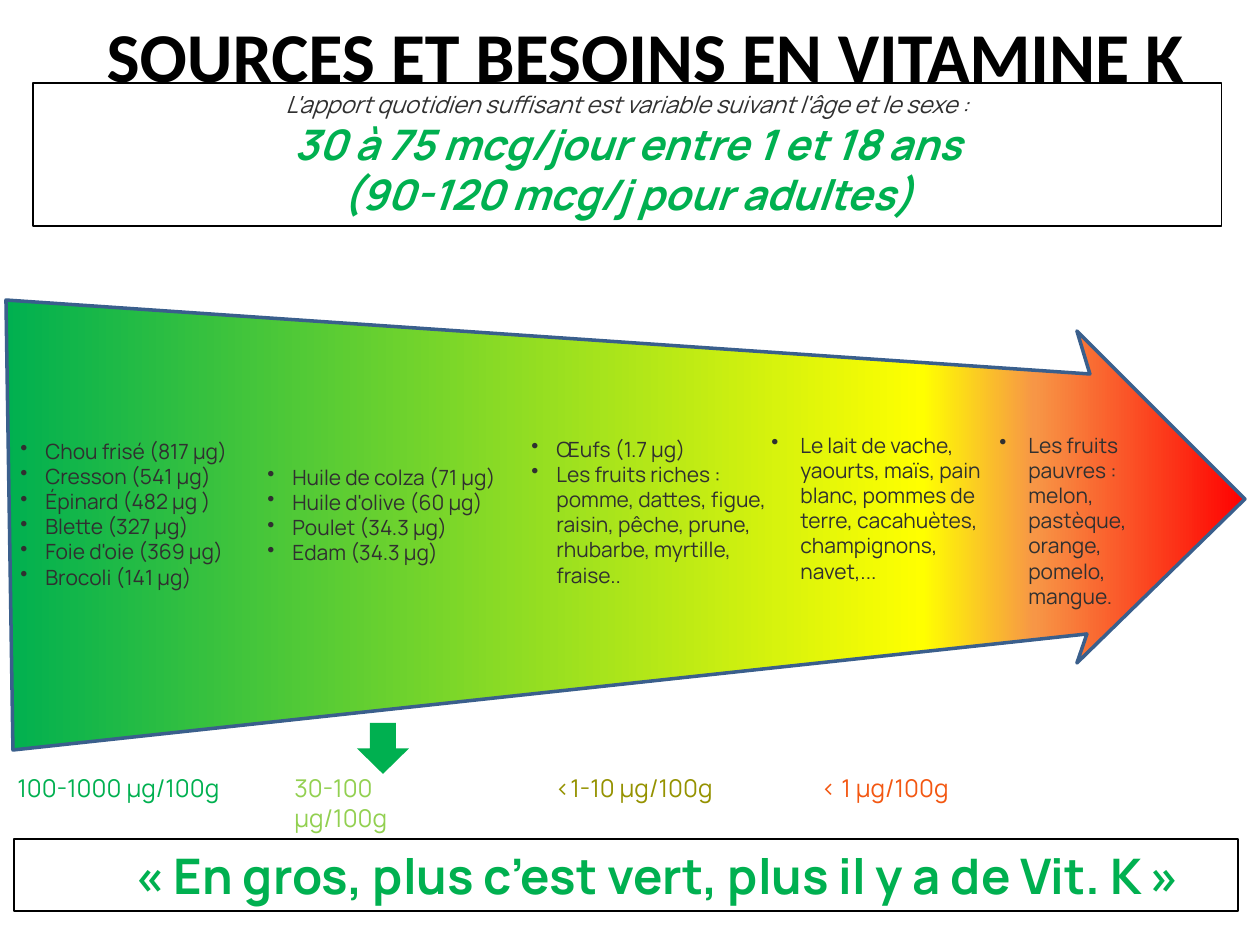
from copy import deepcopy
from pptx import Presentation
from pptx.dml.color import RGBColor
from pptx.enum import shapes, text
from pptx.oxml.xmlchemy import OxmlElement
from pptx.util import Pt

PX = 914400 // 126
HUES = {"ink": "303030", "black": "000000", "green": "00B050", "lime": "92D050",
        "olive": "959200", "orange": "F35711", "edge": "3A5F8C",
        "yellow": "FFFF00", "amber": "F79646", "red": "FF0000"}
MID, LEFT = text.PP_ALIGN.CENTER, text.PP_ALIGN.LEFT


def rgb(hue):
    return RGBColor.from_string(HUES[hue])


def write(shape, lines, size, hue, align=LEFT, bold=False, slant=False,
          face="Manrope", dent=0):
    """Add one paragraph per line, bulleted when dent is given."""
    frame = shape.text_frame
    frame.word_wrap = True
    for line in lines:
        para = frame.paragraphs[0]
        if para.runs:
            para = frame.add_paragraph()
        para.alignment = align
        run = para.add_run()
        run.text = line
        font = run.font
        font.name, font.size = face, Pt(size)
        font.bold, font.italic = bold, slant
        font.color.rgb = rgb(hue)
        if dent:
            props = para._p.get_or_add_pPr()
            props.set("marL", str(dent * PX))
            props.set("indent", str(-dent * PX))
            mark = OxmlElement("a:buChar")
            mark.set("char", "•")
            props.append(mark)


deck = Presentation()
deck.slide_width, deck.slide_height = 1260 * PX, 945 * PX
slide = deck.slides.add_slide(deck.slide_layouts[5])
tree = slide.shapes

# Title
title = tree.title
title.left, title.top, title.width, title.height = [n * PX for n in (94, 6, 1130, 97)]
title.text_frame.vertical_anchor = text.MSO_ANCHOR.TOP
title.text_frame.auto_size = text.MSO_AUTO_SIZE.NONE
write(title, ["SOURCES ET BESOINS EN VITAMINE K"], 40, "black", bold=True, face="Calibri")

# Framed boxes: daily need at the top, motto at the bottom
frames = []
for spot in ((33, 83, 1189, 143), (14, 839, 1224, 72)):
    box = tree.add_shape(shapes.MSO_SHAPE.RECTANGLE, *[n * PX for n in spot])
    box.shadow.inherit = False
    box.fill.background()
    box.line.color.rgb, box.line.width = rgb("black"), Pt(0.75)
    frames.append(box)
need, motto = frames
write(need, ["L'apport quotidien suffisant est variable suivant l'âge et le sexe :"],
      13.5, "ink", MID, slant=True)
write(need, ["30 à 75 mcg/jour entre 1 et 18 ans", "(90-120 mcg/j pour adultes)"],
      24, "green", MID, bold=True, slant=True)
write(motto, ["« En gros, plus c’est vert, plus il y a de Vit. K »"],
      28, "green", MID, bold=True)
motto.text_frame.paragraphs[0]._p.get_or_add_pPr().set("marL", str(63 * PX))

# Large tapering arrow, from rich to poor sources
pen = tree.build_freeform(6, 300, scale=PX)
pen.add_line_segments([(1090, 374), (1077, 331), (1245, 499), (1077, 663),
                       (1087, 634), (13, 750)], close=True)
arrow = pen.convert_to_shape()
arrow.shadow.inherit = False
arrow.line.color.rgb, arrow.line.width = rgb("edge"), Pt(2)
arrow.fill.gradient()
arrow.fill.gradient_angle = 0
stops = arrow.fill.gradient_stops
bar = stops[0]._gs.getparent()
for _ in range(2):
    bar.append(deepcopy(bar[0]))
blend = ((0, "green"), (0.74, "yellow"), (0.83, "amber"), (1, "red"))
for stop, (place, hue) in zip(arrow.fill.gradient_stops, blend):
    stop.position = place
    stop.color.rgb = rgb(hue)

# Food lists: left, top, width, height, bullet indent, items
foods = [
    (8, 432, 352, 165, 25, ["Chou frisé (817 µg)", "Cresson (541 µg)", "Épinard (482 µg )",
                            "Blette (327 µg)", "Foie d'oie (369 µg)", "Brocoli (141 µg)"]),
    (255, 458, 305, 115, 25, ["Huile de colza (71 µg)", "Huile d'olive (60 µg)",
                              "Poulet (34.3 µg)", "Edam (34.3 µg)"]),
    (519, 430, 270, 165, 25, ["Œufs (1.7 µg)", "Les fruits riches : pomme, dattes, figue, "
                              "raisin, pêche, prune, rhubarbe, myrtille, fraise.."]),
    (759, 426, 237, 165, 29, ["Le lait de vache, yaourts, maïs, pain blanc, pommes de terre, "
                              "cacahuètes, champignons, navet,..."]),
    (987, 426, 165, 190, 29, ["Les fruits pauvres : melon, pastèque, orange, pomelo, mangue."]),
]
for x, y, w, h, dent, items in foods:
    box = tree.add_textbox(x * PX, y * PX, w * PX, h * PX)
    write(box, items, 12, "ink", dent=dent)

# Content ranges under the arrow
ranges = [(5, 249, "green", "100-1000 µg/100g"), (282, 190, "lime", "30-100 µg/100g"),
          (543, 205, "olive", "<1-10 µg/100g"), (809, 180, "orange", "< 1 µg/100g")]
for x, w, hue, label in ranges:
    box = tree.add_textbox(x * PX, 767 * PX, w * PX, 43 * PX)
    write(box, [label], 14, hue)

# Small green pointer
tip = tree.add_shape(shapes.MSO_SHAPE.DOWN_ARROW, 357 * PX, 723 * PX, 52 * PX, 51 * PX)
tip.shadow.inherit = False
tip.fill.solid()
tip.fill.fore_color.rgb = rgb("green")
tip.line.fill.background()

deck.save("out.pptx")
